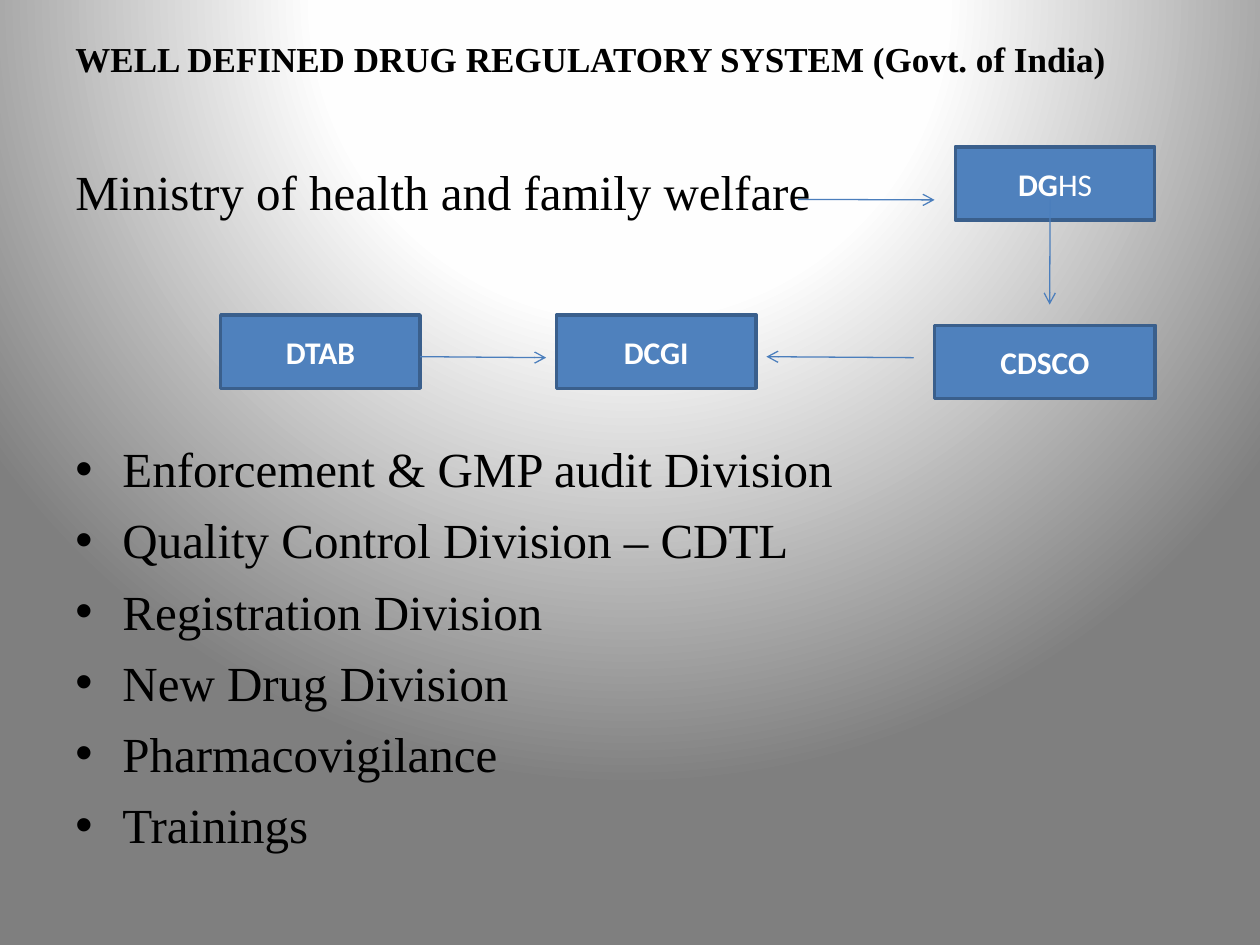
from dataclasses import dataclass

from pptx import Presentation
from pptx.dml.color import RGBColor
from pptx.enum.shapes import MSO_CONNECTOR, MSO_SHAPE
from pptx.enum.text import MSO_ANCHOR, PP_ALIGN
from pptx.oxml import parse_xml
from pptx.oxml.ns import nsdecls
from pptx.util import Cm, Pt
from lxml.etree import SubElement
from pptx.oxml.ns import qn


@dataclass(frozen=True)
class Theme:
    ink: str = "000000"
    box_fill: str = "4F81BD"
    box_line: str = "3A5F8C"
    box_text: str = "FFFFFF"
    arrow: str = "4B7EBC"
    backdrop: tuple = ((0, "FFFFFF"), (40, "FEFEFE"), (100, "7F7F7F"))
    body_font: str = "Times New Roman"
    box_font: str = "Calibri"
    title_size: int = 20
    body_size: int = 28
    box_size: int = 18


class SlideBuilder:
    def __init__(self, slide, theme):
        self.s = slide
        self.theme = theme

    def style(self, r, font, size, color, bold=False):
        r.font.name = font
        r.font.size = Pt(size)
        r.font.bold = bold
        r.font.color.rgb = RGBColor.from_string(color)

    def background(self):
        stops = "".join(
            f'<a:gs pos="{pos * 1000}"><a:srgbClr val="{color}"/></a:gs>'
            for pos, color in self.theme.backdrop)
        bg = parse_xml(
            f'<p:bg {nsdecls("p", "a")}><p:bgPr><a:gradFill rotWithShape="1">'
            f'<a:gsLst>{stops}</a:gsLst><a:path path="circle">'
            '<a:fillToRect l="50000" t="-80000" r="50000" b="180000"/>'
            '</a:path></a:gradFill><a:effectLst/></p:bgPr></p:bg>')
        self.s.element.cSld.insert(0, bg)

    def text(self, left, top, width, height, lines):
        """Each line is (text, size, bold, space before, bulleted)."""
        t = self.theme
        tf = self.s.shapes.add_textbox(
            Cm(left), Cm(top), Cm(width), Cm(height)).text_frame
        tf.word_wrap = True
        for i, (text, size, bold, before, bulleted) in enumerate(lines):
            p = tf.add_paragraph() if i else tf.paragraphs[0]
            p.text = text
            p.alignment = PP_ALIGN.JUSTIFY
            p.space_before = Pt(before)
            self.style(p.runs[0], t.body_font, size, t.ink, bold)
            if bulleted:
                pPr = p._p.get_or_add_pPr()
                pPr.set("marL", str(Cm(0.95)))
                pPr.set("indent", str(-Cm(0.95)))
                SubElement(pPr, qn("a:buFont")).set("typeface", "Arial")
                SubElement(pPr, qn("a:buChar")).set("char", "•")

    def box(self, left, top, width, height, bold_text, plain_text=""):
        t = self.theme
        sp = self.s.shapes.add_shape(
            MSO_SHAPE.RECTANGLE, Cm(left), Cm(top), Cm(width), Cm(height))
        sp.shadow.inherit = False
        sp.fill.solid()
        sp.fill.fore_color.rgb = RGBColor.from_string(t.box_fill)
        sp.line.color.rgb = RGBColor.from_string(t.box_line)
        sp.line.width = Pt(2)
        tf = sp.text_frame
        tf.vertical_anchor = MSO_ANCHOR.MIDDLE
        tf.text = bold_text
        p = tf.paragraphs[0]
        p.alignment = PP_ALIGN.CENTER
        self.style(p.runs[0], t.box_font, t.box_size, t.box_text, True)
        if plain_text:
            r = p.add_run()
            r.text = plain_text
            self.style(r, t.box_font, t.box_size, t.box_text)

    def arrow(self, x1, y1, x2, y2):
        line = self.s.shapes.add_connector(
            MSO_CONNECTOR.STRAIGHT, Cm(x1), Cm(y1), Cm(x2), Cm(y2))
        line.line.color.rgb = RGBColor.from_string(self.theme.arrow)
        line.line.width = Pt(0.75)
        SubElement(line.line._get_or_add_ln(), qn("a:tailEnd")).set("type", "arrow")
        SubElement(line._element.spPr, qn("a:effectLst"))


def main():
    prs = Presentation()
    prs.slide_width, prs.slide_height = Cm(25.4), Cm(19.05)
    theme = Theme()
    b = SlideBuilder(prs.slides.add_slide(prs.slide_layouts[6]), theme)
    b.background()

    # Heading, ministry and divisions; the wide gap leaves room for the chart
    divisions = ["Enforcement & GMP audit Division",
                 "Quality Control Division – CDTL",
                 "Registration Division",
                 "New Drug Division",
                 "Pharmacovigilance",
                 "Trainings"]
    lines = [("WELL DEFINED DRUG REGULATORY SYSTEM (Govt. of India)",
              theme.title_size, True, 0, False),
             ("Ministry of health and family welfare",
              theme.body_size, False, 46.4, False)]
    lines += [(name, theme.body_size, False, 7.1 if i else 125, True)
              for i, name in enumerate(divisions)]
    b.text(1.27, 0.64, 23.28, 17.78, lines)

    # Authorities
    width, height = 4.02, 1.48
    b.box(19.26, 2.96, width, height, "DG", "HS")
    b.box(18.84, 6.56, 4.45, height, "CDSCO")
    for left, name in ((11.22, "DCGI"), (4.45, "DTAB")):
        b.box(left, 6.35, width, height, name)

    # Reporting lines
    b.arrow(16.09, 4.02, 18.84, 4.03)
    b.arrow(21.17, 4.02, 21.16, 6.14)
    b.arrow(18.42, 7.21, 15.45, 7.19)
    b.arrow(8.47, 7.19, 11.01, 7.21)

    prs.save("out.pptx")


if __name__ == "__main__":
    main()
